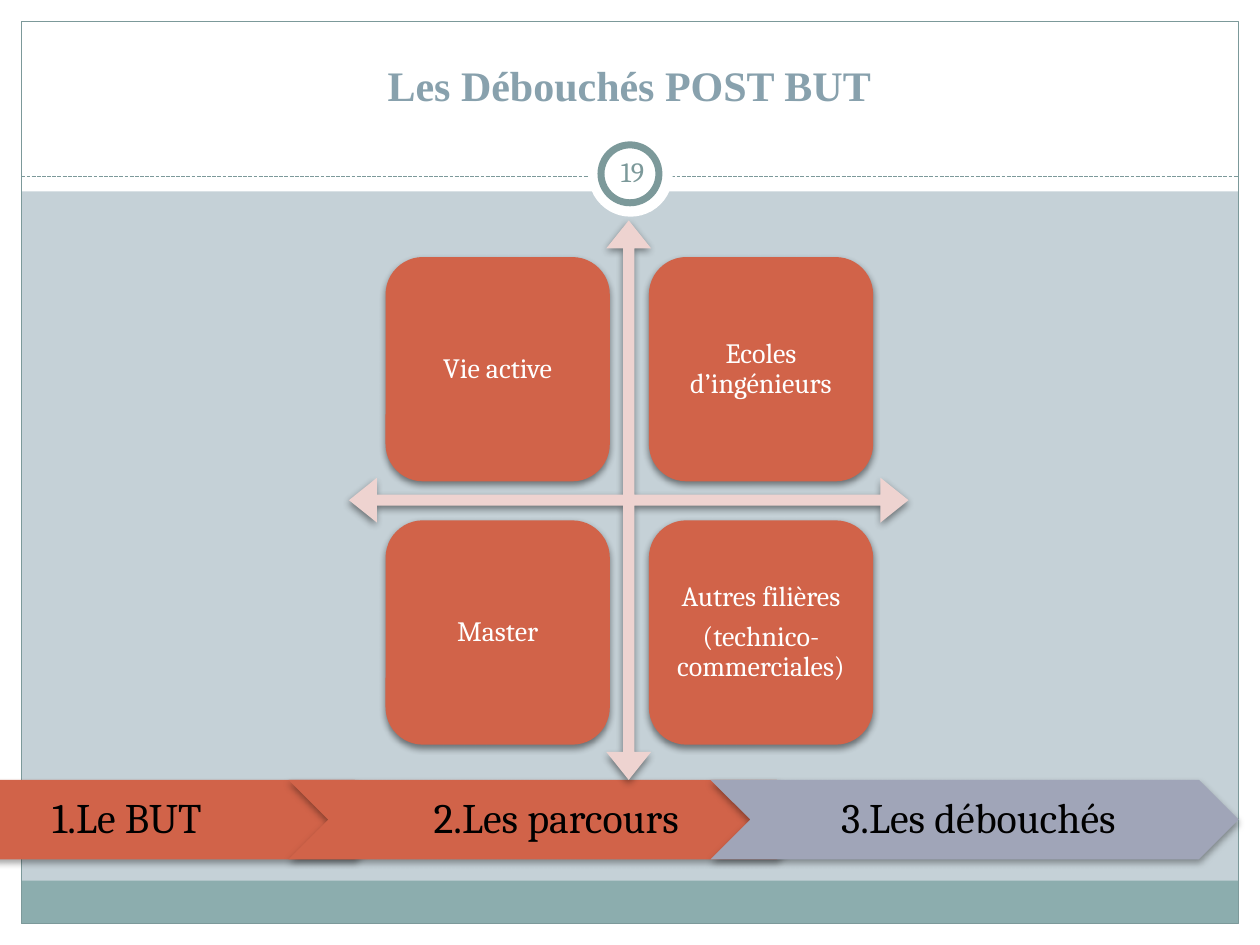
from dataclasses import dataclass
from lxml.etree import SubElement
from pptx import Presentation
from pptx.dml.color import RGBColor
from pptx.enum.dml import MSO_LINE
from pptx.enum.shapes import MSO_CONNECTOR, MSO_SHAPE
from pptx.enum.text import MSO_ANCHOR, PP_ALIGN
from pptx.oxml.ns import qn
from pptx.util import Inches, Pt


@dataclass(frozen=True)
class Theme:
    back: str = "C5D1D7"
    white: str = "FFFFFF"
    black: str = "000000"
    teal: str = "7C999A"
    foot: str = "8CADAE"
    title: str = "88A1AD"
    rust: str = "D16349"
    pink: str = "EED3D0"
    mauve: str = "A0A5B8"
    head: str = "Times New Roman"
    body: str = "Cambria"
    large: int = 24
    small: int = 16


class Deck:
    def __init__(self, theme):
        self.theme = theme
        self.file = Presentation()
        self.file.slide_width, self.file.slide_height = Inches(10), Inches(7.5)
        self.slide = self.file.slides.add_slide(self.file.slide_layouts[5])
        fill = self.slide.background.fill
        fill.solid()
        fill.fore_color.rgb = RGBColor.from_string(theme.back)

    def shape(self, kind, place, fill=None, line=None, width=0.75, shade=0):
        item = self.slide.shapes.add_shape(kind, *map(Inches, place))
        item.shadow.inherit = False
        if fill:
            item.fill.solid()
            item.fill.fore_color.rgb = RGBColor.from_string(fill)
        else:
            item.fill.background()
        if line:
            item.line.color.rgb = RGBColor.from_string(line)
            item.line.width = Pt(width)
        else:
            item.line.fill.background()
        if shade:
            self.shade(item, shade)
        return item

    def shade(self, item, amount):
        effects = item._element.spPr.find(qn("a:effectLst"))
        outer = SubElement(effects, qn("a:outerShdw"), blurRad=str(Pt(4)),
                           dist=str(Pt(2)), dir="5400000", rotWithShape="0")
        color = SubElement(outer, qn("a:srgbClr"), val=self.theme.black)
        SubElement(color, qn("a:alpha"), val=str(amount * 1000))

    def rule(self, start, end):
        item = self.slide.shapes.add_connector(
            MSO_CONNECTOR.STRAIGHT, *map(Inches, start + end))
        item.line.color.rgb = RGBColor.from_string(self.theme.teal)
        item.line.width = Pt(0.75)
        item.line.dash_style = MSO_LINE.SQUARE_DOT
        SubElement(item._element.spPr, qn("a:effectLst"))

    def letter(self, item, text, size, color, inset, space=None):
        frame = item.text_frame
        frame.text = text
        frame.word_wrap = True
        frame.vertical_anchor = MSO_ANCHOR.MIDDLE
        (frame.margin_left, frame.margin_top,
         frame.margin_right, frame.margin_bottom) = map(Inches, inset)
        for para in frame.paragraphs:
            para.alignment = PP_ALIGN.CENTER
            para.line_spacing = space
            self.style(para, self.theme.body, size, color)
        for para in frame.paragraphs[:-1]:
            para.space_after = Pt(size * 0.35)

    def style(self, para, face, size, color, bold=False):
        for run in para.runs:
            run.font.name = face
            run.font.size = Pt(size)
            run.font.bold = bold
            run.font.color.rgb = RGBColor.from_string(color)

    def title(self, text, place):
        item = self.slide.shapes.title
        item.left, item.top, item.width, item.height = map(Inches, place)
        frame = item.text_frame
        frame.text = text
        frame.vertical_anchor = MSO_ANCHOR.BOTTOM
        para = frame.paragraphs[0]
        para.alignment = PP_ALIGN.CENTER
        self.style(para, self.theme.head, self.theme.large, self.theme.title, True)
        tree = item._element.getparent()
        tree.append(item._element)

    def label(self, text, place):
        item = self.slide.shapes.add_textbox(*map(Inches, place))
        self.letter(item, text, self.theme.small, self.theme.teal, [0.05] * 4)

    def card(self, text, place):
        item = self.shape(MSO_SHAPE.ROUNDED_RECTANGLE, place, self.theme.rust, shade=45)
        self.letter(item, text, self.theme.small, self.theme.white, [0.07] * 4, 0.9)

    def step(self, kind, text, place, fill, left):
        item = self.shape(kind, place, fill, shade=35)
        self.letter(item, text, self.theme.large, self.theme.black,
                    (left, 0.07, 0.04, 0.07), 0.9)

    def cross(self, place):
        item = self.shape(MSO_SHAPE.QUAD_ARROW, place, self.theme.pink, shade=45)
        for spot, value in enumerate((0.02, 0.04, 0.05)):
            item.adjustments[spot] = value


def main():
    theme = Theme()
    deck = Deck(theme)
    box, disc = MSO_SHAPE.RECTANGLE, MSO_SHAPE.OVAL

    for place in ((0, 7.33, 10, 0.17), (0, 0, 10, 1.52),
                  (0, 0, 0.17, 7.5), (9.83, 0, 0.17, 7.5)):
        deck.shape(box, place, theme.white)
    deck.shape(box, (0.17, 6.99, 9.66, 0.34), theme.foot)
    deck.shape(box, (0.17, 0.17, 9.66, 7.16), line=theme.teal)
    deck.rule((0.17, 1.4), (9.83, 1.4))
    deck.shape(disc, (4.67, 1.05, 0.67, 0.67), theme.white)
    deck.shape(disc, (4.77, 1.15, 0.46, 0.46), theme.white, theme.teal, 4)
    deck.title("Les Débouchés POST BUT", (0.33, 0, 9.33, 0.92))

    steps = (
        (MSO_SHAPE.PENTAGON, "1.Le BUT", theme.rust, 0.14),
        (MSO_SHAPE.CHEVRON, "2.Les parcours", theme.rust, 0.1),
        (MSO_SHAPE.CHEVRON, "3.Les débouchés", theme.mauve, 0.1),
    )
    for turn, (kind, text, fill, left) in enumerate(steps):
        deck.step(kind, text, (-1.06 + turn * 3.35, 6.19, 4.19, 0.63), fill, left)

    deck.cross((2.77, 1.75, 4.44, 4.44))
    cards = ("Vie active", "Ecoles d’ingénieurs", "Master",
             "Autres filières\n(technico-commerciales)")
    for spot, text in enumerate(cards):
        row, col = divmod(spot, 2)
        deck.card(text, (3.06 + col * 2.09, 2.04 + row * 2.09, 1.78, 1.78))

    deck.label("19", (4.77, 1.12, 0.5, 0.48))
    deck.file.save("out.pptx")


if __name__ == "__main__":
    main()
